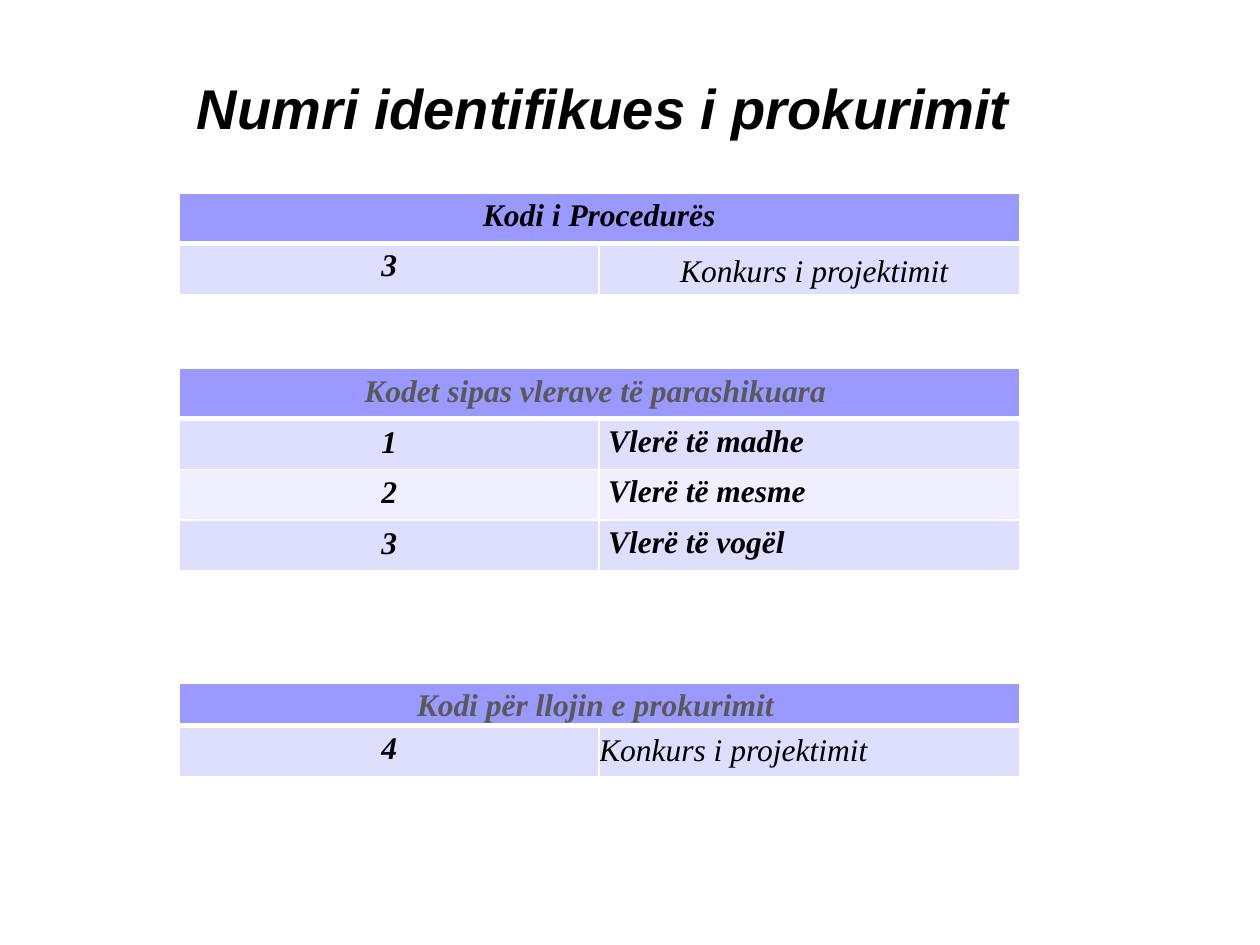
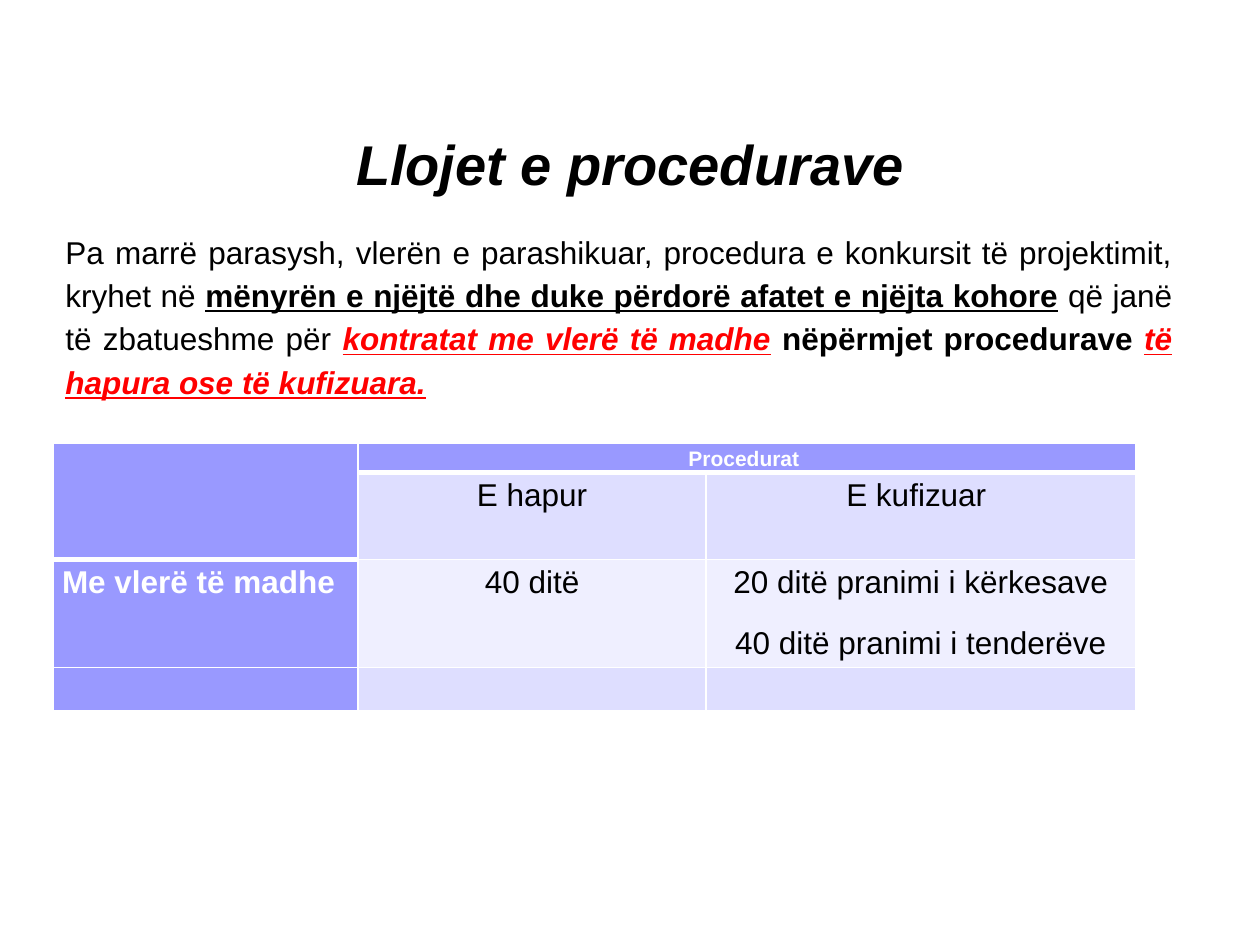
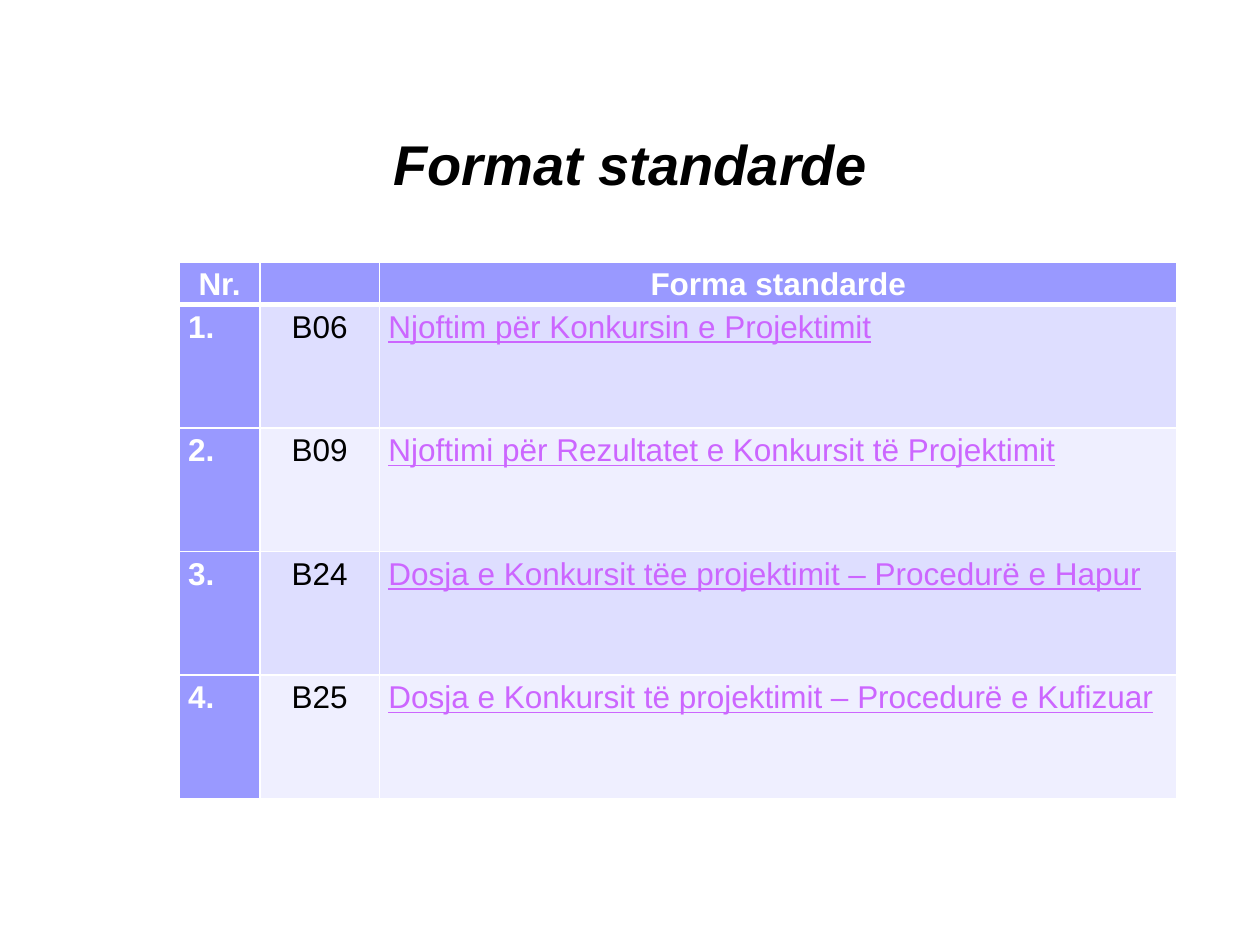
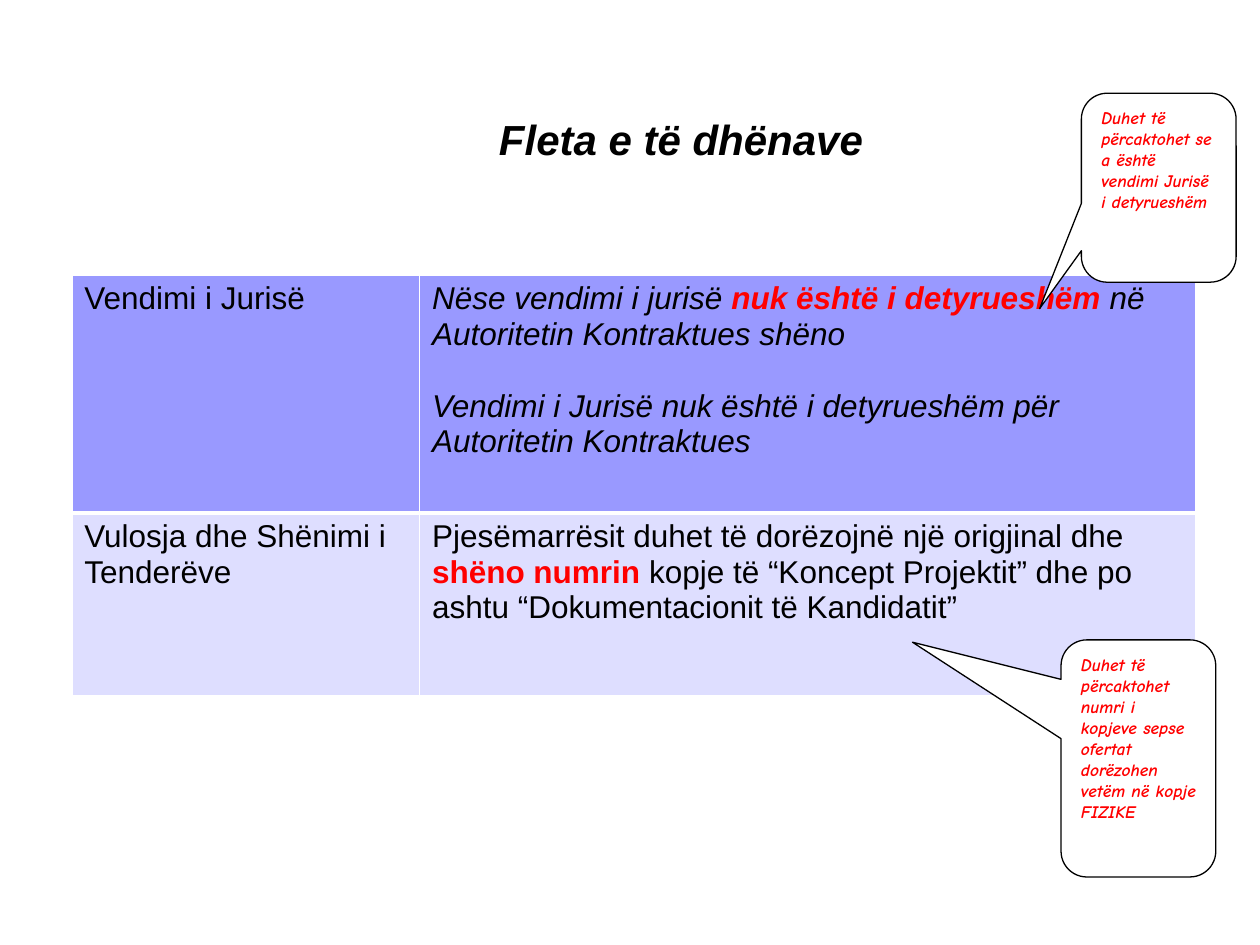
from dataclasses import dataclass, field

from pptx import Presentation
from pptx.dml.color import RGBColor as RGB
from pptx.enum.shapes import MSO_SHAPE as SHAPE
from pptx.enum.text import MSO_ANCHOR as ANCHOR, MSO_AUTO_SIZE as AUTO, PP_ALIGN as ALIGN
from pptx.oxml.ns import qn
from pptx.util import Cm, Pt
from lxml.etree import SubElement

COLORS = {
    "black": "000000",
    "white": "FFFFFF",
    "gray": "595959",
    "red": "FF0000",
    "link": "CC66FF",
    "head": "9999FF",
    "band": "DEDEFF",
    "pale": "EFEFFF",
}


@dataclass(frozen=True)
class Style:
    font: str = "Arial"
    size: int = 18
    color: str = "black"
    bold: bool = False
    italic: bool = False
    underline: bool = False


BODY = Style()
BOLD = Style(bold=True)
ITALIC = Style(italic=True)
HEAD = Style(color="white", bold=True)
LINK = Style(color="link", underline=True)
RED = Style(color="red", bold=True)
RED_LINE = Style(color="red", bold=True, italic=True, underline=True)
CODE = Style("Times New Roman", bold=True, italic=True)
CODE_HEAD = Style("Times New Roman", color="gray", bold=True, italic=True)
CODE_TEXT = Style("Times New Roman", italic=True)
NOTE = Style("Comic Neue", 10, "red", True, True)

TIGHT = (0.18, 0, 0.18, 0)
ROOMY = (0.25, 0.13, 0.25, 0.13)


@dataclass
class Cell:
    paras: list = field(default_factory=list)
    style: Style = BODY
    align: ALIGN = ALIGN.LEFT
    spacing: float = 1.15
    margins: tuple = TIGHT
    anchor: ANCHOR = ANCHOR.TOP
    gap: int = 12


def center(text, style=BODY, **options):
    return Cell([text], style, ALIGN.CENTER, **options)


def rgb(name):
    return RGB.from_string(COLORS[name])


def write(tf, paras, style, align=ALIGN.LEFT, spacing=1.0, gap=0):
    for i, runs in enumerate(paras):
        p = tf.paragraphs[0] if i == 0 else tf.add_paragraph()
        p.alignment = align
        p.line_spacing = spacing
        p.space_before = Pt(gap if i else 0)
        for text, st in [(runs, style)] if isinstance(runs, str) else runs:
            r = p.add_run()
            r.text = text
            f = r.font
            f.name, f.size = st.font, Pt(st.size)
            f.bold, f.italic, f.underline = st.bold, st.italic, st.underline
            f.color.rgb = rgb(st.color)


def set_margins(target, margins):
    (target.margin_left, target.margin_top,
     target.margin_right, target.margin_bottom) = map(Cm, margins)


def new_slide(prs, title, box, size=32, margins=ROOMY):
    s = prs.slides.add_slide(prs.slide_layouts[5])
    sp = s.shapes.title
    sp.left, sp.top, sp.width, sp.height = map(Cm, box)
    tf = sp.text_frame
    tf.word_wrap, tf.auto_size = True, AUTO.NONE
    tf.vertical_anchor = ANCHOR.TOP
    set_margins(tf, margins)
    write(tf, [title], Style(size=size, bold=True, italic=True), ALIGN.CENTER)
    return s


def set_borders(cell, bottom):
    tc_pr = cell._tc.get_or_add_tcPr()
    for i, (side, width) in enumerate(zip("LRTB", (1, 1, 1, bottom))):
        ln = tc_pr.makeelement(qn(f"a:ln{side}"), {"w": str(Pt(width))})
        fill = SubElement(ln, qn("a:solidFill"))
        SubElement(fill, qn("a:srgbClr"), val=COLORS["white"])
        tc_pr.insert(i, ln)


def add_table(s, left, top, widths, heights, rows, merges=(), head_col=False):
    frame = s.shapes.add_table(len(heights), len(widths), Cm(left), Cm(top),
                               Cm(sum(widths)), Cm(sum(heights)))
    tbl = frame.table
    tbl.first_row = tbl.horz_banding = False
    for col, width in zip(tbl.columns, widths):
        col.width = Cm(width)
    for row, height in zip(tbl.rows, heights):
        row.height = Cm(height)
    for start, end in merges:
        tbl.cell(*start).merge(tbl.cell(*end))
    for i, row in enumerate(rows):
        for j, content in enumerate(row):
            cell = tbl.cell(i, j)
            is_head = i == 0 or (head_col and j == 0)
            cell.fill.solid()
            cell.fill.fore_color.rgb = rgb("head" if is_head else "band" if i % 2 else "pale")
            set_borders(cell, 3 if i == 0 else 1)
            set_margins(cell, content.margins)
            cell.vertical_anchor = content.anchor
            write(cell.text_frame, content.paras, content.style, content.align,
                  content.spacing, content.gap)


def add_callout(s, box, tip, text):
    sp = s.shapes.add_shape(SHAPE.ROUNDED_RECTANGULAR_CALLOUT, *map(Cm, box))
    sp.shadow.inherit = False
    sp.adjustments[0], sp.adjustments[1] = tip
    sp.fill.solid()
    sp.fill.fore_color.rgb = rgb("white")
    sp.line.color.rgb = rgb("black")
    sp.line.width = Pt(0.75)
    tf = sp.text_frame
    tf.word_wrap = True
    tf.vertical_anchor = ANCHOR.TOP
    write(tf, [text], NOTE)


def procurement_number(prs):
    s = new_slide(prs, "Numri identifikues i prokurimit", (1.27, 1.35, 21.79, 1.63))

    def code_table(top, heights, rows):
        add_table(s, 3.61, top, [8.47] * 2, heights, rows, [((0, 0), (0, 1))])

    code_table(3.89, [1.02, 1.04], [
        [center("Kodi i Procedurës", CODE), Cell()],
        [center("3", CODE),
         center("Konkurs i projektimit", CODE_TEXT, margins=(0.2, 0, 0, 0),
                anchor=ANCHOR.MIDDLE)],
    ])
    code_table(13.77, [0.86, 1.02], [
        [center("Kodi për llojin e prokurimit ", CODE_HEAD), Cell()],
        [center("4", CODE),
         Cell(["Konkurs i projektimit"], CODE_TEXT, spacing=1.0,
              margins=(0, 0, 0, 0), anchor=ANCHOR.MIDDLE)],
    ])
    loose = dict(spacing=1.0, margins=ROOMY)
    values = ["Vlerë të madhe", "Vlerë të mesme ", "Vlerë të vogël "]
    code_table(7.42, [1.02] * 4, [
        [center("Kodet sipas vlerave të parashikuara ", CODE_HEAD, **loose), Cell()],
        *[[center(str(n), CODE, **loose), Cell([value], CODE, ALIGN.JUSTIFY)]
          for n, value in enumerate(values, 1)],
    ])


def procedure_types(prs):
    s = new_slide(prs, "Llojet e procedurave", (1.3, 1.4, 22.81, 4.88),
                  margins=(0.25, 1.22, 0.25, 0.13))
    tf = s.shapes.add_textbox(Cm(1.07), Cm(4.45), Cm(22.81), Cm(5.03)).text_frame
    tf.word_wrap = True
    write(tf, [[
        ("Pa marrë parasysh, vlerën e parashikuar, procedura e konkursit të "
         "projektimit, kryhet në ", BODY),
        ("mënyrën e njëjtë dhe duke përdorë afatet e njëjta kohore",
         Style(bold=True, underline=True)),
        (" që janë të zbatueshme për ", BODY),
        ("kontratat me vlerë të madhe", RED_LINE),
        (" nëpërmjet procedurave ", BOLD),
        ("të hapura ose të kufizuara.", RED_LINE),
    ]], BODY, ALIGN.JUSTIFY, 1.15)
    add_table(s, 1.07, 8.94, [6.15, 7.01, 8.66], [0.59, 1.75, 2.18, 0.87], [
        [Cell(), center("Procedurat ", Style(size=12, color="white", bold=True)), Cell()],
        [Cell(), center("E hapur"), center("E kufizuar ")],
        [Cell(["Me vlerë të madhe"], HEAD, ALIGN.JUSTIFY),
         center("40 ditë"),
         Cell(["20 ditë pranimi i kërkesave", "40 ditë pranimi i tenderëve"],
              align=ALIGN.CENTER)],
        [Cell(), Cell(), Cell()],
    ], [((0, 0), (1, 0)), ((0, 1), (0, 2))], head_col=True)


def standard_forms(prs):
    s = new_slide(prs, "Format standarde", (1.3, 1.4, 22.81, 2.64),
                  margins=(0.25, 1.22, 0.25, 0.13))
    forms = [
        ("B06", "Njoftim për Konkursin e Projektimit"),
        ("B09", "Njoftimi për Rezultatet e Konkursit të Projektimit"),
        ("B24", "Dosja e Konkursit tëe projektimit – Procedurë e Hapur"),
        ("B25", "Dosja e Konkursit të projektimit – Procedurë e Kufizuar"),
    ]
    add_table(s, 3.61, 5.28, [1.63, 2.41, 16.08], [0.86] + [2.49] * len(forms), [
        [center("Nr.", HEAD), Cell(), center("Forma standarde", HEAD)],
        *[[Cell([f"{n}."], HEAD), center(code), Cell([name], LINK)]
          for n, (code, name) in enumerate(forms, 1)],
    ], head_col=True)


def data_sheet(prs):
    s = new_slide(prs, "Fleta e të dhënave", (1.3, 2.16, 22.81, 2.31), 24,
                  (2.3, 0.13, 0.25, 0.13))
    loose = dict(spacing=1.0, margins=ROOMY, gap=21)
    add_table(s, 1.45, 5.54, [7.01, 15.65], [4.8, 3.68], [
        [Cell(["Vendimi i Jurisë"], **loose),
         Cell([
             [("Nëse vendimi i jurisë ", ITALIC),
              ("nuk është i detyrueshëm", Style(color="red", bold=True, italic=True)),
              (" në Autoritetin Kontraktues shëno", ITALIC)],
             "Vendimi i Jurisë nuk është i detyrueshëm për Autoritetin Kontraktues",
         ], ITALIC, **loose)],
        [Cell(["Vulosja dhe Shënimi i Tenderëve"], **loose),
         Cell([[
             ("Pjesëmarrësit duhet të dorëzojnë një origjinal dhe ", BODY),
             ("shëno numrin ", RED),
             ("kopje të “Koncept Projektit” dhe po ashtu “Dokumentacionit të "
              "Kandidatit”", BODY),
         ]], **loose)],
    ])
    add_callout(s, (21.39, 12.9, 3.12, 4.78), (-1.46, -0.49),
                "Duhet të përcaktohet numri i kopjeve sepse ofertat dorëzohen "
                "vetëm në kopje FIZIKE")
    add_callout(s, (21.8, 1.88, 3.12, 3.81), (-0.77, 0.64),
                "Duhet të përcaktohet se a është vendimi Jurisë i detyrueshëm")


def main():
    prs = Presentation()
    prs.slide_width, prs.slide_height = Cm(25.4), Cm(19.05)
    procurement_number(prs)
    procedure_types(prs)
    standard_forms(prs)
    data_sheet(prs)
    prs.save("out.pptx")


if __name__ == "__main__":
    main()
